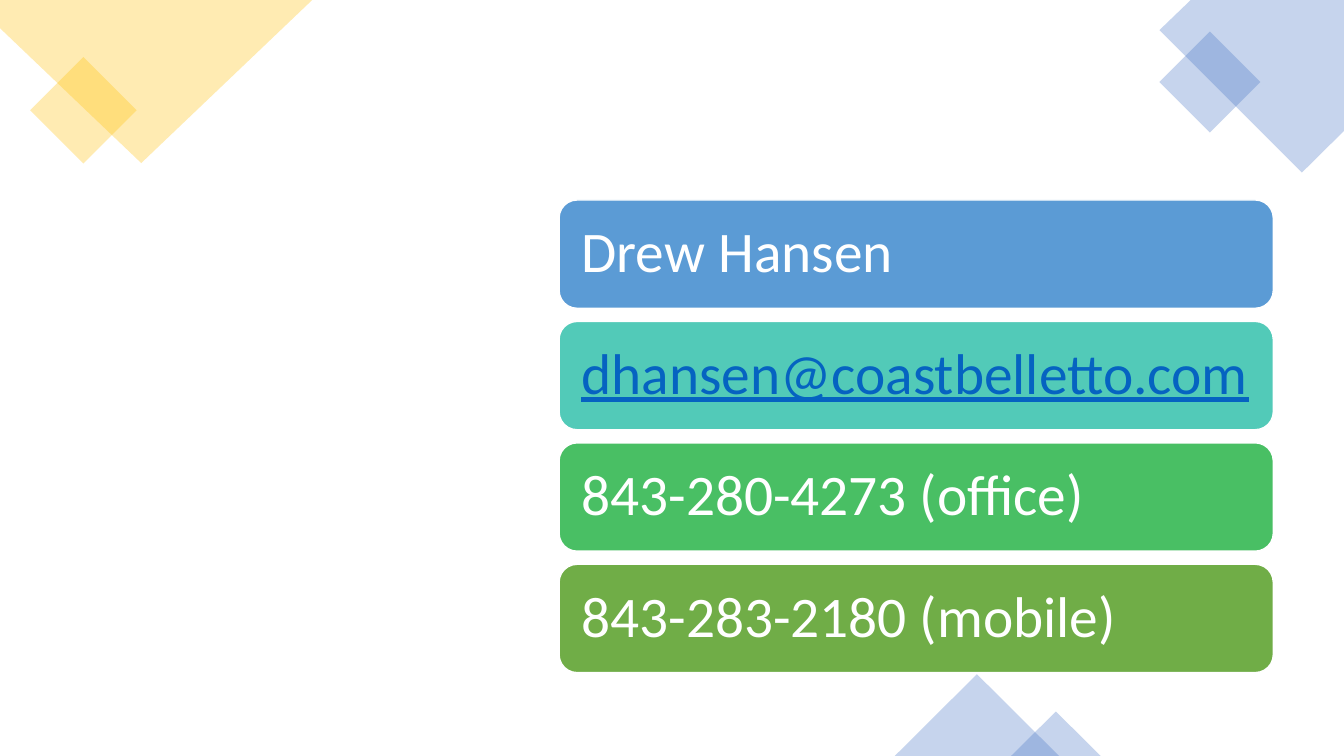
from lxml import etree
from pptx import Presentation, util as u
from pptx.dml.color import RGBColor
from pptx.enum import shapes, text
from pptx.oxml.ns import qn

Cm, Pt = u.Cm, u.Pt
KIND = shapes.MSO_SHAPE
GOLD, BLUE, WHITE, LINK = "FFC000", "4472C4", "FFFFFF", "0563C1"
CARDS = [
    ("Drew Hansen", "5B9BD5", WHITE),
    ("dhansen@coastbelletto.com", "52CAB8", LINK),
    ("843-280-4273 (office)", "49BF64", WHITE),
    ("843-283-2180 (mobile)", "70AD47", WHITE),
]


def paint(fill, tone):
    """Set a solid fill from a hex string."""
    fill.solid()
    fill.fore_color.rgb = RGBColor.from_string(tone)


def tint(shape, tone):
    """Give a shape a 30% opaque fill and no line."""
    shape.shadow.inherit = False
    shape.line.fill.background()
    paint(shape.fill, tone)
    hue = shape.fill._xPr.find(qn("a:solidFill"))[0]
    etree.SubElement(hue, qn("a:alpha"), val="30000")


def outline(slide, x, y, dots, tone):
    """Draw a tinted polygon from points relative to x, y."""
    spots = [(Cm(x + a), Cm(y + b)) for a, b in dots]
    pen = slide.shapes.build_freeform(*spots[0])
    pen.add_line_segments(spots[1:], close=True)
    tint(pen.convert_to_shape(), tone)


def preset(slide, kind, x, y, w, h, tone, turn=0):
    """Draw a tinted preset shape in the given box."""
    shape = slide.shapes.add_shape(kind, Cm(x), Cm(y), Cm(w), Cm(h))
    shape.rotation = turn
    tint(shape, tone)


def left(slide, x, y):
    """Draw the gold corner from its top left point."""
    preset(slide, KIND.RECTANGLE, x + 1.15, y + 1.83, 1.9, 1.9, GOLD, 45)
    outline(slide, x, y, [(0, 0), (7.87, 0), (3.56, 4.11), (0, 0.71)], GOLD)


def right(slide, x, y):
    """Draw the blue corner from its top right point."""
    dots = [(-3.86, 0), (0, 0), (0, 3.3), (-1.06, 4.35), (-4.65, 0.76)]
    outline(slide, x, y, dots, BLUE)
    preset(slide, KIND.RECTANGLE, x - 4.28, y + 1.17, 1.8, 1.8, BLUE, 45)


def peaks(slide, x, y):
    """Draw the two triangles standing on the line at y."""
    preset(slide, KIND.ISOSCELES_TRIANGLE, x, y - 2.06, 4.14, 2.06, BLUE)
    preset(slide, KIND.ISOSCELES_TRIANGLE, x + 2.93, y - 1.12, 2.26, 1.12, BLUE)


def card(slide, x, y, w, h, words, tone, ink):
    """Draw one rounded contact card with its text."""
    box = slide.shapes.add_shape(
        KIND.ROUNDED_RECTANGLE, Cm(x), Cm(y), Cm(w), Cm(h))
    box.shadow.inherit = False
    paint(box.fill, tone)
    paint(box.line.fill, WHITE)
    box.line.width = Pt(1)
    frame = box.text_frame
    frame.text = words
    frame.word_wrap = True
    frame.vertical_anchor = text.MSO_ANCHOR.MIDDLE
    frame.margin_left = Cm(0.43)
    frame.margin_right = frame.margin_top = frame.margin_bottom = 0
    para = frame.paragraphs[0]
    para.alignment = text.PP_ALIGN.LEFT
    para.line_spacing = 0.9
    font = para.runs[0].font
    font.name, font.size = "Calibri", Pt(41)
    font.underline = ink == LINK
    paint(font.fill, ink)


def stack(slide, x, y, w, h):
    """Spread the contact cards evenly down the box."""
    tall = 2.73
    step = (h - tall) / (len(CARDS) - 1)
    for i, (words, tone, ink) in enumerate(CARDS):
        card(slide, x, y + i * step, w, tall, words, tone, ink)


def main():
    """Build the contact slide and save it."""
    deck = Presentation()
    deck.slide_width, deck.slide_height = Cm(33.87), Cm(19.05)
    slide = deck.slides.add_slide(deck.slide_layouts[6])
    left(slide, 0, 0)
    right(slide, 33.87, 0)
    peaks(slide, 22.55, 19.05)
    stack(slide, 14.09, 5.04, 18, 11.91)
    deck.save("out.pptx")


if __name__ == "__main__":
    main()
